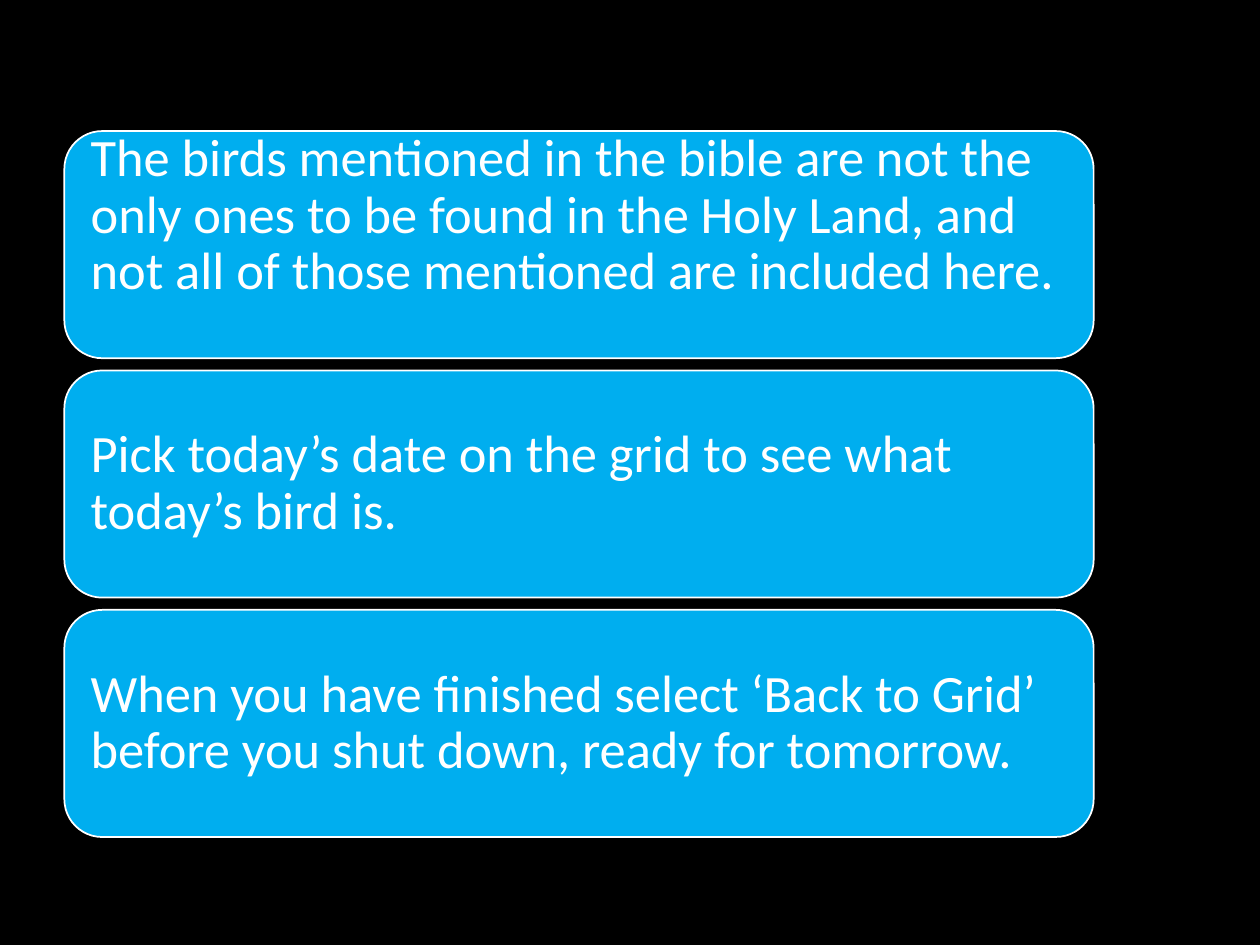
import pptx
import pptx.util
import pptx.dml.color
import pptx.enum.shapes
import pptx.enum.text

Pt = pptx.util.Pt
RGBColor = pptx.dml.color.RGBColor

BLACK = RGBColor(0x00, 0x00, 0x00)
WHITE = RGBColor(0xFF, 0xFF, 0xFF)
BLUE = RGBColor(0x00, 0xAE, 0xEF)

INSET = 8.7
RAISED = INSET + 32.4  # lifts the first text by half a line

# (text, bottom inset)
NOTES = [
    ("The birds mentioned in the bible are not the only ones to be found in "
     "the Holy Land, and not all of those mentioned are included here.", RAISED),
    ("Pick today’s date on the grid to see what today’s bird is.", INSET),
    ("When you have finished select ‘Back to Grid’ before you shut down, "
     "ready for tomorrow.", INSET),
]

LEFT, TOP, WIDTH, HEIGHT, GAP = 36.8, 74.9, 588.2, 129.8, 7


def add_note(s, top, text, bottom_inset):
    sp = s.shapes.add_shape(pptx.enum.shapes.MSO_SHAPE.ROUNDED_RECTANGLE,
                            Pt(LEFT), Pt(top), Pt(WIDTH), Pt(HEIGHT))
    sp.shadow.inherit = False
    sp.fill.solid()
    sp.fill.fore_color.rgb = BLUE
    sp.line.color.rgb = WHITE
    sp.line.width = Pt(1)

    tf = sp.text_frame
    tf.word_wrap = True
    tf.vertical_anchor = pptx.enum.text.MSO_ANCHOR.MIDDLE
    tf.margin_left = tf.margin_right = tf.margin_top = Pt(INSET)
    tf.margin_bottom = Pt(bottom_inset)
    tf.text = text
    p = tf.paragraphs[0]
    p.alignment = pptx.enum.text.PP_ALIGN.LEFT
    p.line_spacing = 0.9
    font = p.runs[0].font
    font.name = "Calibri"
    font.size = Pt(30)
    font.color.rgb = WHITE


def main():
    prs = pptx.Presentation()
    prs.slide_width, prs.slide_height = Pt(720), Pt(540)
    s = prs.slides.add_slide(prs.slide_layouts[6])
    s.background.fill.solid()
    s.background.fill.fore_color.rgb = BLACK
    for i, (text, bottom_inset) in enumerate(NOTES):
        add_note(s, TOP + i * (HEIGHT + GAP), text, bottom_inset)
    prs.save("out.pptx")


if __name__ == "__main__":
    main()
